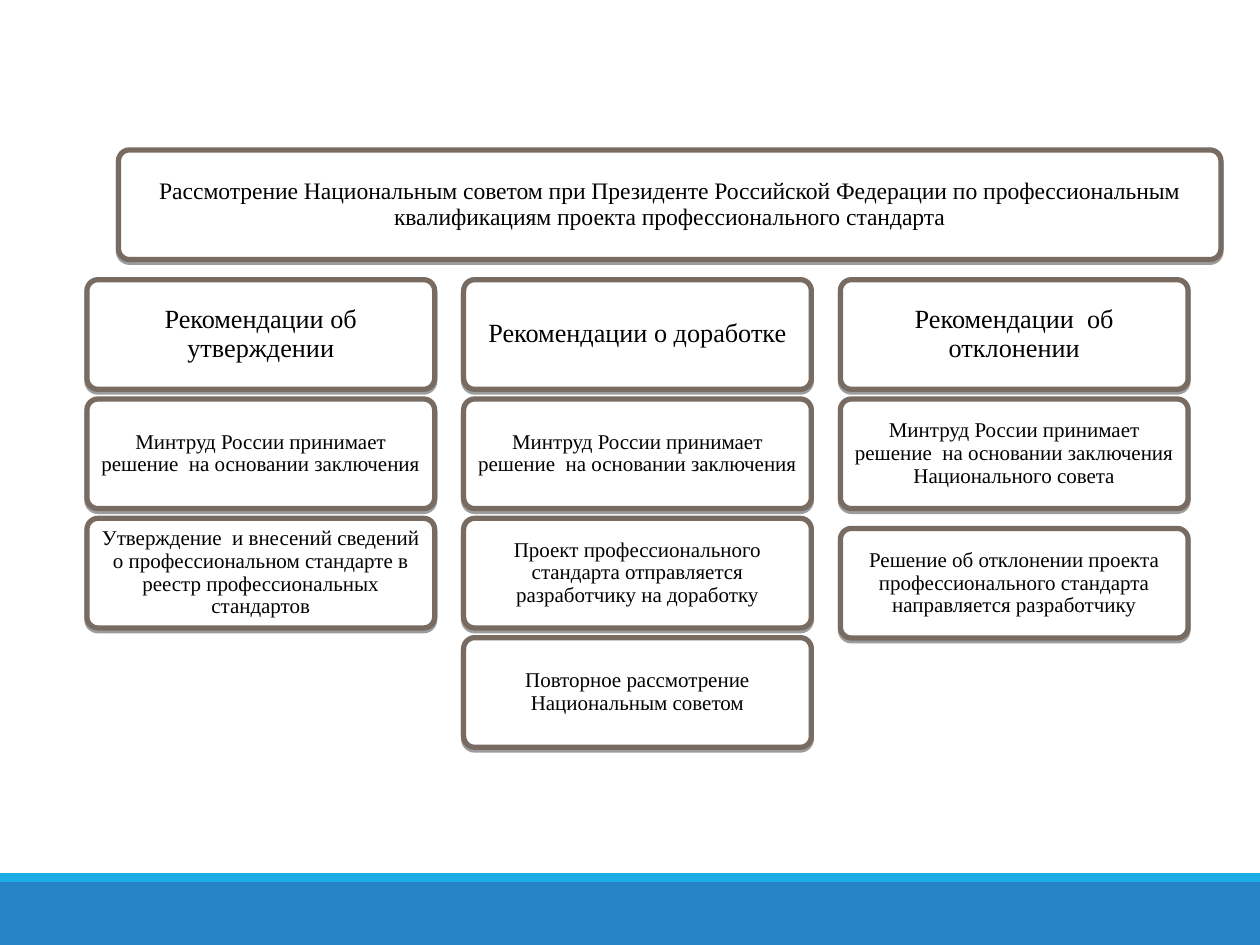
from lxml import etree
from pptx import Presentation
from pptx import util as u
from pptx.dml.color import RGBColor
from pptx.enum import shapes, text
from pptx.oxml.ns import qn

BOX_HEIGHT = 0.87
COLUMN_WIDTH = 2.76


def paint(target, color):
    target.solid()
    target.fore_color.rgb = RGBColor.from_string(color)


def add_box(left, top, width, wording, size, inset=0.05):
    box = page.shapes.add_shape(
        shapes.MSO_SHAPE.ROUNDED_RECTANGLE, u.Inches(left), u.Inches(top),
        u.Inches(width), u.Inches(BOX_HEIGHT))
    box.adjustments[0] = 0.1
    paint(box.fill, "FFFFFF")
    paint(box.line.fill, "786B62")
    box.line.width = u.Pt(3)

    # Soft-toned shadow straight below
    box.shadow.inherit = False
    effects = box.element.spPr.find(qn("a:effectLst"))
    shadow = etree.SubElement(effects, qn("a:outerShdw"), blurRad="0",
                              dist="20000", dir="5400000", rotWithShape="0")
    tone = etree.SubElement(shadow, qn("a:srgbClr"), val="000000")
    etree.SubElement(tone, qn("a:alpha"), val="38000")

    frame = box.text_frame
    frame.word_wrap = True
    frame.vertical_anchor = text.MSO_ANCHOR.MIDDLE
    frame.margin_left = frame.margin_right = u.Inches(inset)
    frame.margin_top = frame.margin_bottom = u.Inches(inset)
    frame.text = wording
    para = frame.paragraphs[0]
    para.alignment = text.PP_ALIGN.CENTER
    para.line_spacing = 0.9
    para.space_after = u.Pt(size * 0.35)
    span = para.runs[0]
    span.font.name = "Times New Roman"
    span.font.size = u.Pt(size)
    paint(span.font.fill, "000000")


deck = Presentation()
deck.slide_width = u.Inches(10)
deck.slide_height = u.Inches(7.5)
page = deck.slides.add_slide(deck.slide_layouts[6])

# Footer bands
for top, height, color in [(7, 0.5, "2683C6"), (6.93, 0.07, "1CADE4")]:
    band = page.shapes.add_shape(
        shapes.MSO_SHAPE.RECTANGLE, 0, u.Inches(top),
        deck.slide_width, u.Inches(height))
    band.shadow.inherit = False
    paint(band.fill, color)
    band.line.fill.background()

# Review step across the top
add_box(0.94, 1.19, 8.75,
        "Рассмотрение Национальным советом при Президенте Российской Федерации "
        "по профессиональным квалификациям проекта профессионального стандарта",
        13.5, inset=0.06)

# One column per recommendation: heading first, then the steps that follow
decision = "Минтруд России принимает решение  на основании заключения"
columns = [
    ["Рекомендации об утверждении",
     decision,
     "Утверждение  и внесений сведений о профессиональном стандарте "
     "в реестр профессиональных стандартов"],
    ["Рекомендации о доработке",
     decision,
     "Проект профессионального стандарта отправляется разработчику на доработку",
     "Повторное рассмотрение Национальным советом"],
    ["Рекомендации  об отклонении",
     decision + " Национального совета",
     "Решение об отклонении проекта профессионального стандарта "
     "направляется разработчику"],
]
for column, steps in enumerate(columns):
    for row, wording in enumerate(steps):
        top = 2.22 + row * 0.947
        if (column, row) == (2, 2):
            top += 0.08  # the rejection outcome sits slightly lower
        add_box(0.69 + column * 2.99, top, COLUMN_WIDTH, wording,
                15 if row == 0 else 12)

deck.save("out.pptx")
